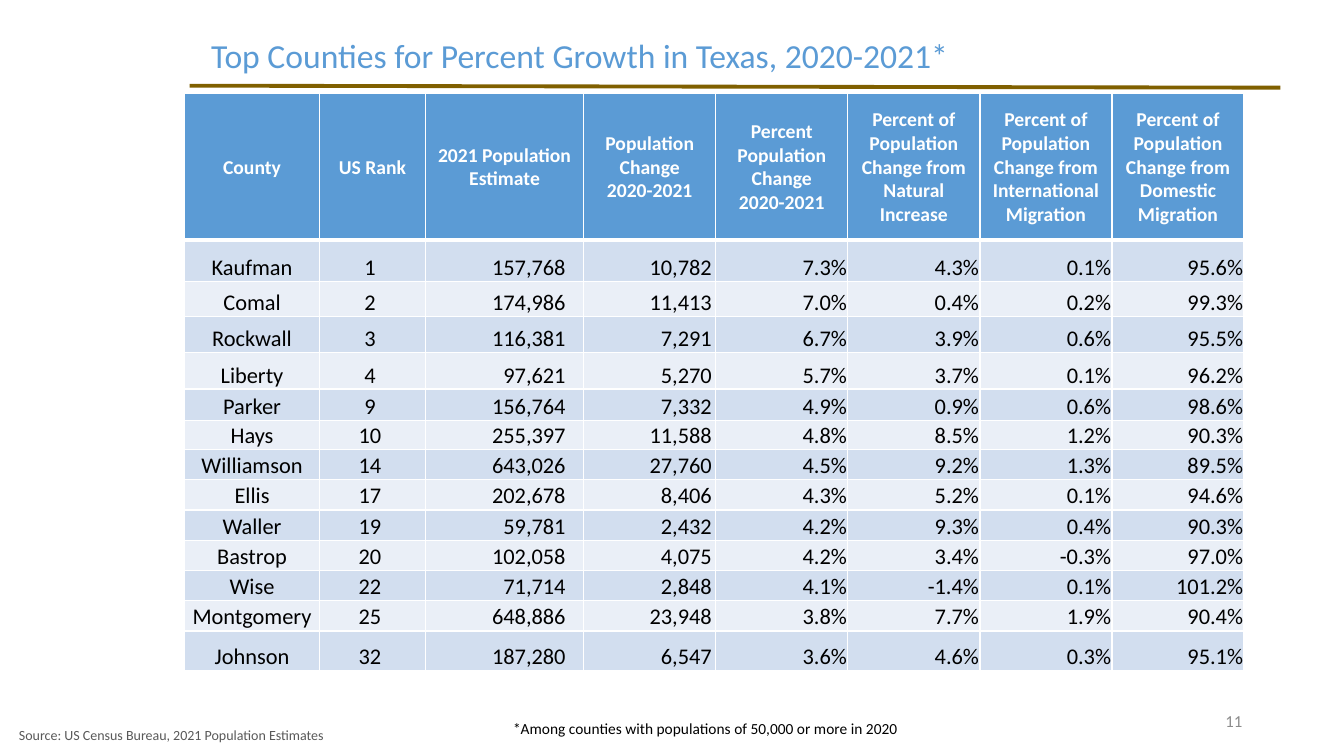
from lxml.etree import SubElement
from pptx import Presentation
from pptx.dml.color import RGBColor
from pptx.enum.shapes import MSO_CONNECTOR
from pptx.enum.text import MSO_ANCHOR, PP_ALIGN
from pptx.oxml.ns import qn
from pptx.util import Pt

PX = 9144  # EMU per px, 100 px to the inch
FONT = "Calibri"
BLUE, WHITE, BLACK = "5B9BD5", "FFFFFF", "000000"
BANDS = ["D2DEEF", "EAEFF7"]
LEFT, CENTER, RIGHT = PP_ALIGN.LEFT, PP_ALIGN.CENTER, PP_ALIGN.RIGHT

COL_WIDTHS = [134, 105, 157] + [131] * 5
ROW_HEIGHTS = [145, 41, 35, 36, 36, 31, 29] + [30] * 6 + [39]
COL_ALIGN = [CENTER] * 2 + [RIGHT] * 6
COL_RIGHT_MARGIN = [1, 6, 18, 4, 1, 1, 1, 1]

HEADERS = [
    "County",
    "US Rank",
    "2021 Population Estimate",
    "Population Change\n2020-2021",
    "Percent Population Change\n2020-2021",
    "Percent of Population Change from Natural Increase",
    "Percent of Population Change from International Migration",
    "Percent of Population Change from Domestic Migration",
]
COUNTIES = [
    ["Kaufman", "1", "157,768", "10,782", "7.3%", "4.3%", "0.1%", "95.6%"],
    ["Comal", "2", "174,986", "11,413", "7.0%", "0.4%", "0.2%", "99.3%"],
    ["Rockwall", "3", "116,381", "7,291", "6.7%", "3.9%", "0.6%", "95.5%"],
    ["Liberty", "4", "97,621", "5,270", "5.7%", "3.7%", "0.1%", "96.2%"],
    ["Parker", "9", "156,764", "7,332", "4.9%", "0.9%", "0.6%", "98.6%"],
    ["Hays", "10", "255,397", "11,588", "4.8%", "8.5%", "1.2%", "90.3%"],
    ["Williamson", "14", "643,026", "27,760", "4.5%", "9.2%", "1.3%", "89.5%"],
    ["Ellis", "17", "202,678", "8,406", "4.3%", "5.2%", "0.1%", "94.6%"],
    ["Waller", "19", "59,781", "2,432", "4.2%", "9.3%", "0.4%", "90.3%"],
    ["Bastrop", "20", "102,058", "4,075", "4.2%", "3.4%", "-0.3%", "97.0%"],
    ["Wise", "22", "71,714", "2,848", "4.1%", "-1.4%", "0.1%", "101.2%"],
    ["Montgomery", "25", "648,886", "23,948", "3.8%", "7.7%", "1.9%", "90.4%"],
    ["Johnson", "32", "187,280", "6,547", "3.6%", "4.6%", "0.3%", "95.1%"],
]


def rgb(color):
    return RGBColor.from_string(color)


def write(tf, text, size=16, color=BLACK, bold=False, align=LEFT, spacing=None):
    """Fill a text frame, one paragraph per line of text."""
    for i, line in enumerate(text.split("\n")):
        p = tf.add_paragraph() if i else tf.paragraphs[0]
        p.alignment = align
        p.line_spacing = spacing
        r = p.add_run()
        r.text = line
        r.font.name = FONT
        r.font.size = Pt(size)
        r.font.bold = bold
        r.font.color.rgb = rgb(color)


def add_text(s, x, y, w, h, text, anchor=MSO_ANCHOR.TOP, **style):
    tf = s.shapes.add_textbox(x * PX, y * PX, w * PX, h * PX).text_frame
    tf.word_wrap = True
    tf.vertical_anchor = anchor
    write(tf, text, **style)


def add_rule(s, x1, y1, x2, y2, color, width):
    line = s.shapes.add_connector(
        MSO_CONNECTOR.STRAIGHT, x1 * PX, y1 * PX, x2 * PX, y2 * PX)
    line.line.color.rgb = rgb(color)
    line.line.width = Pt(width)
    SubElement(line._element.spPr, qn("a:effectLst"))


def set_borders(cell, color, **widths):
    """Draw the given sides (L, R, T, B, in that order) with widths in points."""
    tc_pr = cell._tc.get_or_add_tcPr()
    for side, width in widths.items():
        ln = SubElement(tc_pr, qn(f"a:ln{side}"), w=str(Pt(width)))
        fill = SubElement(ln, qn("a:solidFill"))
        SubElement(fill, qn("a:srgbClr"), val=color)


def format_cell(cell, text, fill, right, anchor, bottom_border, **style):
    cell.margin_left = cell.margin_top = PX
    cell.margin_right = right * PX
    cell.margin_bottom = 0
    cell.vertical_anchor = anchor
    set_borders(cell, WHITE, L=1, R=1, T=1, B=bottom_border)
    cell.fill.solid()
    cell.fill.fore_color.rgb = rgb(fill)
    write(cell.text_frame, text, **style)


def add_county_table(s, x, y):
    table = s.shapes.add_table(
        len(ROW_HEIGHTS), len(COL_WIDTHS), x * PX, y * PX,
        sum(COL_WIDTHS) * PX, sum(ROW_HEIGHTS) * PX).table
    for column, width in zip(table.columns, COL_WIDTHS):
        column.width = width * PX
    for row, height in zip(table.rows, ROW_HEIGHTS):
        row.height = height * PX
    for c, header in enumerate(HEADERS):
        format_cell(table.cell(0, c), header, BLUE, 1, MSO_ANCHOR.MIDDLE, 3,
                    size=14, color=WHITE, bold=True, align=CENTER)
    for r, county in enumerate(COUNTIES):
        for c, value in enumerate(county):
            format_cell(table.cell(r + 1, c), value, BANDS[r % 2],
                        COL_RIGHT_MARGIN[c], MSO_ANCHOR.BOTTOM, 1,
                        align=COL_ALIGN[c])


def main():
    prs = Presentation()
    prs.slide_width, prs.slide_height = 1333 * PX, 750 * PX
    s = prs.slides.add_slide(prs.slide_layouts[6])
    add_rule(s, 188, 85, 1270, 87, "806000", 2.75)
    add_text(s, 191, 30, 768, 50,
             "Top Counties for Percent Growth in Texas, 2020-2021*",
             size=24, color=BLUE, align=CENTER)
    add_county_table(s, 183, 93)
    add_text(s, 499, 708, 683, 29,
             "*Among counties with populations of 50,000 or more in 2020", size=11)
    add_text(s, 9, 715, 500, 28,
             "Source: US Census Bureau, 2021 Population Estimates",
             size=10, color="595959", spacing=1.07)
    add_text(s, 942, 695, 300, 40, "11", anchor=MSO_ANCHOR.MIDDLE,
             size=12, color="8C8C8C", align=RIGHT)
    prs.save("out.pptx")


if __name__ == "__main__":
    main()
